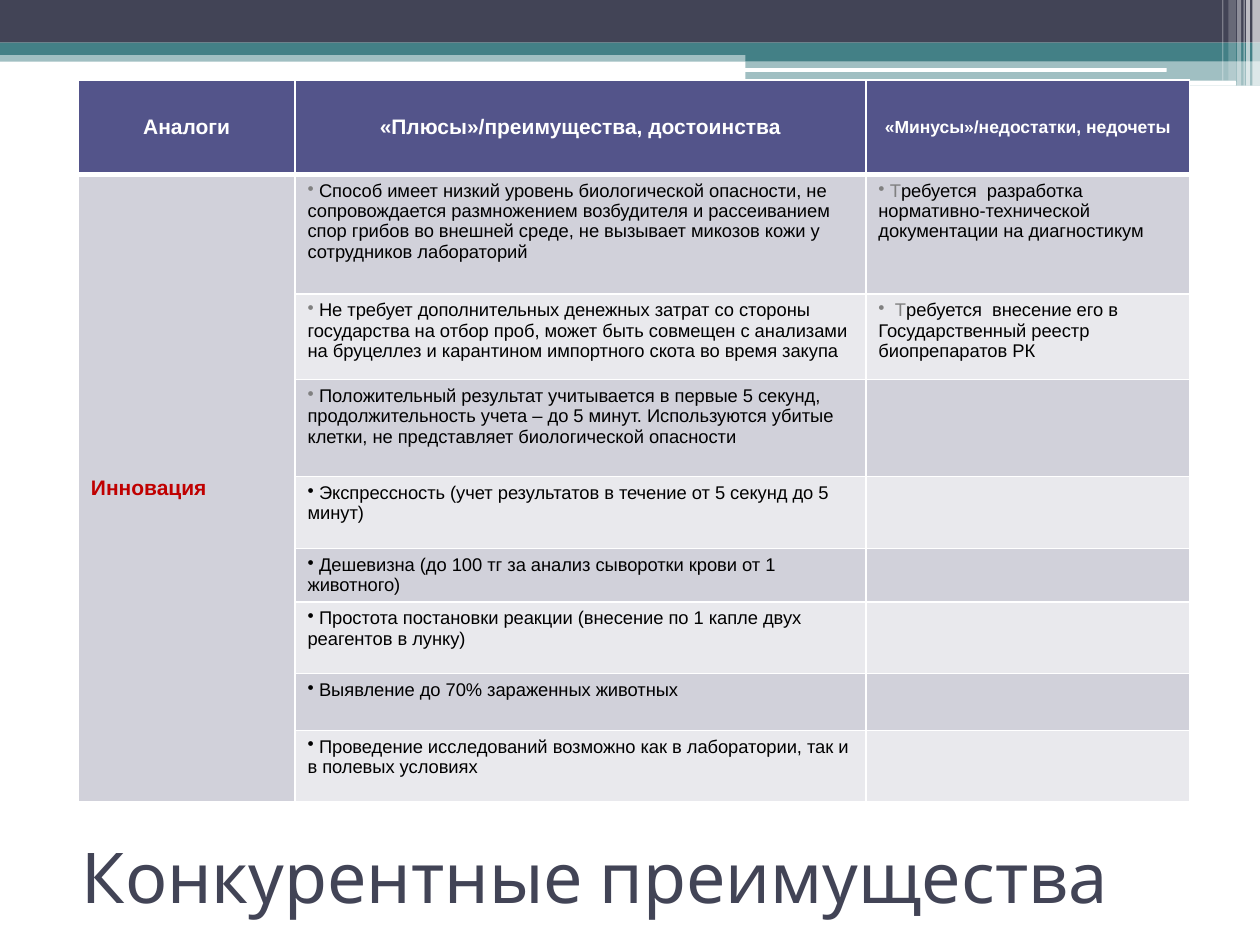
import pptx
import pptx.util
import pptx.oxml.ns
from lxml import etree
from pptx.dml.color import RGBColor
from pptx.enum.shapes import MSO_SHAPE
from pptx.enum.text import MSO_ANCHOR, MSO_AUTO_SIZE, PP_ALIGN

Pt = pptx.util.Pt
qn = pptx.oxml.ns.qn

WHITE = RGBColor(0xFF, 0xFF, 0xFF)
BLACK = RGBColor(0, 0, 0)
GREY = RGBColor(0x80, 0x80, 0x80)
RED = RGBColor(0xC0, 0, 0)
SLATE = RGBColor(0x42, 0x44, 0x56)
TEAL = RGBColor(0x43, 0x80, 0x86)
HEADER = RGBColor(0x53, 0x54, 0x8A)
BANDS = [RGBColor(0xD1, 0xD1, 0xDA), RGBColor(0xE9, 0xE9, 0xED)]

prs = pptx.Presentation()
prs.slide_width, prs.slide_height = Pt(720), Pt(540)
s = prs.slides.add_slide(prs.slide_layouts[5])


def add_bar(left, top, width, height, color, opacity=100, rounded=False):
    kind = MSO_SHAPE.ROUNDED_RECTANGLE if rounded else MSO_SHAPE.RECTANGLE
    sp = s.shapes.add_shape(kind, Pt(left), Pt(top), Pt(width), Pt(height))
    sp.shadow.inherit = False
    sp.line.fill.background()
    sp.fill.solid()
    sp.fill.fore_color.rgb = color
    if opacity < 100:
        clr = sp.fill._xPr.find(".//" + qn("a:srgbClr"))
        etree.SubElement(clr, qn("a:alpha"), val=str(opacity * 1000))


def style_cell(cell, color, top=1, bottom=1):
    """Draw white borders around the cell and fill it."""
    tcPr = cell._tc.get_or_add_tcPr()
    for side, width in (("L", 1), ("R", 1), ("T", top), ("B", bottom)):
        ln = etree.SubElement(tcPr, qn("a:ln" + side), w=str(Pt(width)))
        fill = etree.SubElement(ln, qn("a:solidFill"))
        etree.SubElement(fill, qn("a:srgbClr"), val=str(WHITE))
    cell.fill.solid()
    cell.fill.fore_color.rgb = color


# Header bands
add_bar(0, 28.8, 720, 6.5, TEAL, 50)
add_bar(0, 0, 720, 24.4, SLATE)
add_bar(0, 24.4, 720, 7, TEAL)
add_bar(426, 28.1, 294, 6.7, TEAL)
add_bar(426, 34.6, 294, 14.4, TEAL, 50)
add_bar(425.5, 38.9, 241.2, 2.2, WHITE, rounded=True)
add_bar(580.3, 46.1, 126, 2.9, WHITE, rounded=True)

# Translucent stripes at the right edge: left, width, height, opacity
for left, width, height, opacity in [
    (715.7, 4.3, 49, 65), (712.1, 2.2, 49, 65), (710.6, 0.7, 49, 60),
    (707, 2.2, 49, 40), (702, 4.3, 46.1, 20), (698.4, 0.7, 46.1, 30),
]:
    add_bar(left, 0, width, height, WHITE, opacity)

# Title
title = s.shapes.title
title.left, title.top, title.width, title.height = Pt(39.6), Pt(472.3), Pt(644.4), Pt(56.2)
tf = title.text_frame
tf.text = "Конкурентные преимущества"
tf.word_wrap = True
tf.auto_size = MSO_AUTO_SIZE.NONE
tf.vertical_anchor = MSO_ANCHOR.MIDDLE
p = tf.paragraphs[0]
p.alignment = PP_ALIGN.LEFT
p.font.size, p.font.name, p.font.color.rgb = Pt(40), "Karla", SLATE

# Table content: each text is a grey lead followed by black words
headers = [("Аналоги", 12), ("«Плюсы»/преимущества, достоинства", 12),
           ("«Минусы»/недостатки, недочеты", 10)]
pluses = [
    (" ", "Способ имеет низкий уровень биологической опасности, не сопровождается "
          "размножением возбудителя и рассеиванием спор грибов во внешней среде, "
          "не вызывает микозов кожи у сотрудников лабораторий"),
    (" ", "Не требует дополнительных денежных затрат со стороны государства на отбор "
          "проб, может быть совмещен с анализами на бруцеллез и карантином импортного "
          "скота во время закупа"),
    (" ", "Положительный результат учитывается в первые 5 секунд, продолжительность "
          "учета – до 5 минут. Используются убитые клетки, не представляет "
          "биологической опасности"),
    ("", " Экспрессность (учет результатов в течение от 5 секунд до 5 минут)"),
    ("", " Дешевизна (до 100 тг за анализ сыворотки крови от 1 животного)"),
    ("", " Простота постановки реакции (внесение по 1 капле двух реагентов в лунку)"),
    ("", " Выявление до 70% зараженных животных"),
    ("", " Проведение исследований возможно как в лаборатории, так и в полевых условиях"),
]
minuses = [
    (" Т", "ребуется  разработка нормативно-технической документации на диагностикум"),
    ("  Т", "ребуется  внесение его в Государственный реестр биопрепаратов РК"),
]
minuses += [("", "")] * (len(pluses) - len(minuses))

# Table grid
widths = [123.8, 326.2, 185]
heights = [54, 68.4, 49, 55.4, 41, 26.6, 41, 32.4, 41]
table = s.shapes.add_table(len(heights), len(widths), Pt(44.8), Pt(45.6),
                           Pt(sum(widths)), Pt(sum(heights))).table
for column, width in zip(table.columns, widths):
    column.width = Pt(width)
for row, height in zip(table.rows, heights):
    row.height = Pt(height)

# Header row
for col, (text, size) in enumerate(headers):
    cell = table.cell(0, col)
    style_cell(cell, HEADER, bottom=3)
    cell.text = text
    cell.vertical_anchor = MSO_ANCHOR.MIDDLE
    p = cell.text_frame.paragraphs[0]
    p.alignment = PP_ALIGN.CENTER
    p.font.size, p.font.name, p.font.bold = Pt(size), "Arial", True
    p.font.color.rgb = WHITE

# Pluses and minuses
for row, texts in enumerate(zip(pluses, minuses), 1):
    band, top = BANDS[(row - 1) % 2], 3 if row == 1 else 1
    style_cell(table.cell(row, 0), BANDS[0], top)
    for col, (lead, words) in enumerate(texts, 1):
        cell = table.cell(row, col)
        style_cell(cell, band, top)
        p = cell.text_frame.paragraphs[0]
        p.font.size, p.font.name, p.font.bold = Pt(10.5), "Arial", False
        if not words:
            continue
        pPr = p._p.get_or_add_pPr()
        pPr.set("marL", "0")
        pPr.set("indent", "0")
        pPr.insert(0, etree.Element(qn("a:buChar"), char="•"))
        for text, color in ((lead, GREY), (words, BLACK)):
            if text:
                r = p.add_run()
                r.text = text
                r.font.color.rgb = color

# Row label spanning all body rows
label = table.cell(1, 0)
label.merge(table.cell(len(pluses), 0))
label.text = "Инновация"
label.vertical_anchor = MSO_ANCHOR.MIDDLE
p = label.text_frame.paragraphs[0]
p.font.size, p.font.name, p.font.bold = Pt(12), "Arial", True
p.font.color.rgb = RED

prs.save("out.pptx")
